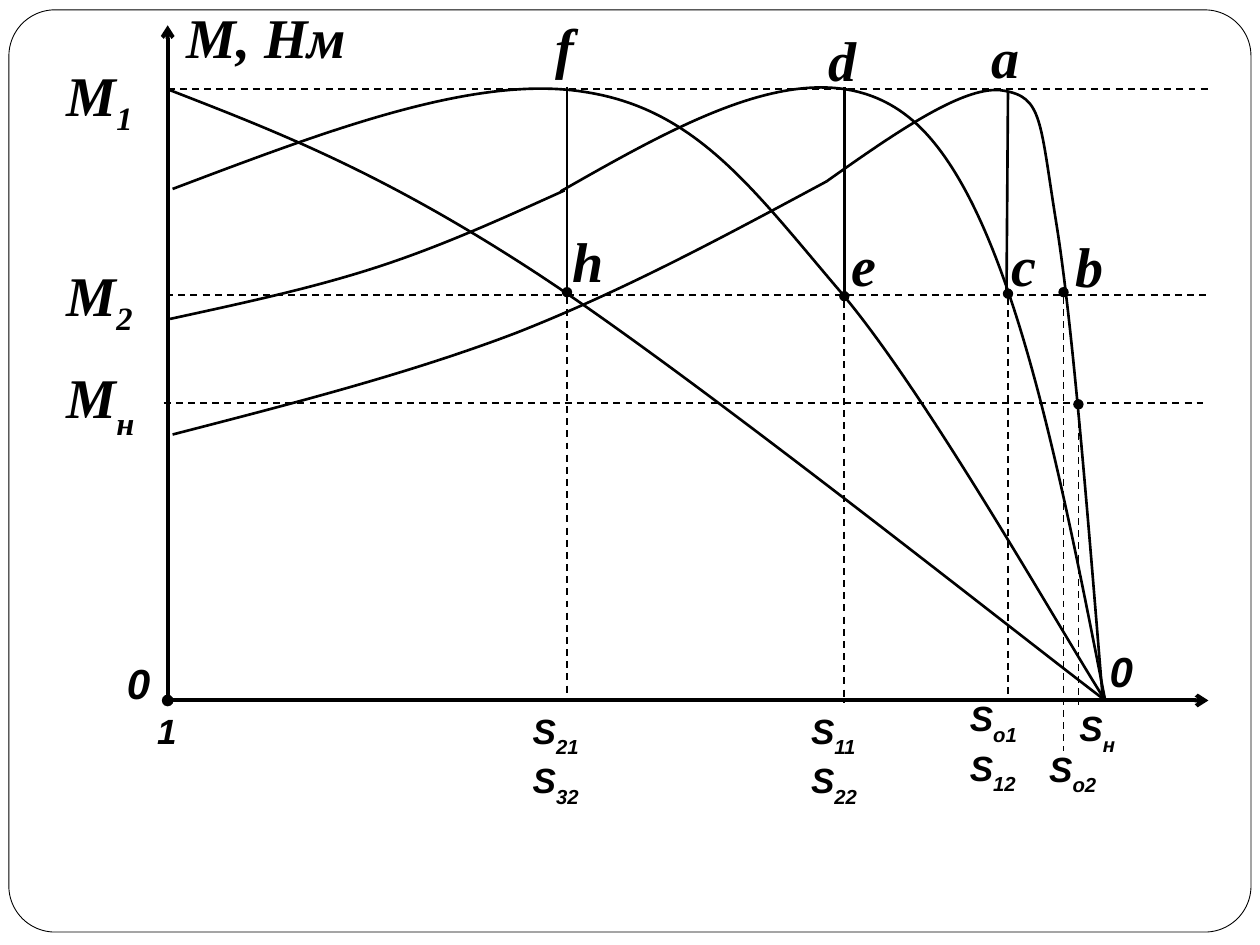
from dataclasses import dataclass

from lxml.etree import SubElement
from pptx import Presentation
from pptx.dml.color import RGBColor
from pptx.enum.dml import MSO_LINE
from pptx.enum.shapes import MSO_CONNECTOR, MSO_SHAPE
from pptx.enum.text import MSO_ANCHOR, PP_ALIGN
from pptx.oxml.ns import qn
from pptx.slide import Slide
from pptx.util import Cm, Pt

Point = tuple[float, float]


@dataclass(frozen=True)
class Theme:
    ink: RGBColor = RGBColor(0, 0, 0)
    paper: RGBColor = RGBColor(255, 255, 255)
    serif: str = "Times New Roman"
    sans: str = "Arial"
    point_size: int = 32
    zero_size: int = 24
    slip_size: int = 20
    frame_weight: float = 0.5
    guide_weight: float = 1
    curve_weight: float = 1.5
    axis_weight: float = 2.25


THEME = Theme()


@dataclass(frozen=True)
class Rule:
    """A straight line; lengths in cm."""
    start: Point
    end: Point
    weight: float = THEME.guide_weight
    dashed: bool = True
    head: str = ""
    tail: str = ""


@dataclass(frozen=True)
class Label:
    """Text lines, each a base with an optional subscript after "_"."""
    lines: tuple[str, ...]
    left: float
    top: float
    width: float
    height: float = 1.55
    font: str = THEME.serif
    size: int = THEME.point_size
    drop: int = -30


# Positions on the axes, in cm
AXIS_X, AXIS_Y = 3.38, 14.12
AXIS_END = 24.36
M1, M2, M_NOMINAL = 1.8, 5.94, 8.13
F_X, D_X, A_X, B_X, NOMINAL_X = 11.43, 17.02, 20.32, 21.44, 21.74
SYNCHRONOUS = (22.28, AXIS_Y)

RULES = [
    # Axes
    Rule((AXIS_X, 14.17), (AXIS_X, 0.51), THEME.axis_weight, False, tail="arrow"),
    Rule((AXIS_X, AXIS_Y), (AXIS_END, AXIS_Y), THEME.axis_weight, False, "oval", "arrow"),
    # Torque levels
    Rule((AXIS_X, M1), (AXIS_END, M1)),
    Rule((3.35, M2), (24.33, M2)),
    Rule((3.3, M_NOMINAL), (24.26, M_NOMINAL)),
    # Switching between speed steps
    Rule((F_X, 1.75), (F_X, 5.84), THEME.curve_weight, False),
    Rule((D_X, 1.75), (D_X, 5.99), THEME.curve_weight, False),
    Rule((A_X, 1.83), (20.29, 5.92), THEME.curve_weight, False),
    # Drops to the slip axis
    *(Rule((x, top), (x, bottom), head="oval") for x, top, bottom in (
        (F_X, 5.89, 14.05), (D_X, 5.97, 14.15), (A_X, 5.92, 14.07),
        (B_X, 5.89, 15.14), (NOMINAL_X, 8.15, 14.22))),
]

# Each curve: a start, then three Bézier points per segment
CURVES: list[list[Point]] = [
    [(AXIS_X, M1), (5.54, 2.64), (7.67, 3.45), (10.82, 5.51),
     (13.97, 7.57), (20.37, 12.67), SYNCHRONOUS],
    [(3.48, 3.81), (6.5, 2.67), (9.53, 1.5), (11.76, 1.85), (14, 2.18),
     (15.14, 3.76), (16.89, 5.82), (18.64, 7.85), (21.39, 12.73), SYNCHRONOUS],
    [SYNCHRONOUS, (21.31, 9.17), (20.32, 4.22), (18.49, 2.51),
     (16.66, 0.81), (13.97, 2.34), (11.3, 3.86)],
    [(11.38, 3.84), (10.16, 4.39), (8.94, 4.95), (7.62, 5.38),
     (6.27, 5.82), (4.85, 6.12), (3.43, 6.43)],
    [(22.23, 14.07), (21.92, 10.29), (21.62, 6.5), (21.29, 4.47), (20.96, 2.41),
     (21.01, 1.96), (20.24, 1.83), (19.48, 1.68), (18.06, 2.67), (16.66, 3.66)],
    [(16.66, 3.66), (14.63, 4.75), (12.62, 5.84), (10.41, 6.71),
     (8.23, 7.54), (5.84, 8.15), (3.48, 8.76)],
]

SLIP = {"font": THEME.sans, "size": THEME.slip_size}
ZERO = {"font": THEME.sans, "size": THEME.zero_size}

LABELS = [
    # Torque axis
    Label(("М, Нм",), 3.51, -0.08, 4.39, 1.78),
    Label(("М_1",), 1.09, 1.09, 1.91, 1.63, drop=-25),
    Label(("М_2",), 1.09, 5.13, 1.91, 1.63, drop=-25),
    Label(("М_н",), 1.09, 7.19, 2.29, 1.88),
    # Working points
    Label(("f",), 10.95, 0.13, 1.14),
    Label(("d",), 16.46, 0.38, 1.45),
    Label(("a",), 19.74, 0.33, 1.4),
    Label(("h",), 11.3, 4.45, 1.98),
    Label(("e",), 16.92, 4.52, 1.98),
    Label(("c",), 20.14, 4.52, 1.98),
    Label(("b",), 21.44, 4.55, 1.98),
    # Slip axis
    Label(("0",), 2.31, 13.13, 1.12, 1.19, **ZERO),
    Label(("0",), 22.12, 12.88, 1.98, **ZERO),
    Label(("1",), 2.92, 14.17, 0.99, 1.04, **SLIP),
    Label(("S_21", "S_32"), 10.49, 14.17, 2.01, 2.44, **SLIP),
    Label(("S_11", "S_22"), 16.1, 14.17, 1.98, 2.44, **SLIP),
    Label(("S_о1", "S_12"), 19.3, 13.92, 1.98, 2.49, **SLIP),
    Label(("S_н",), 21.51, 14.12, 1.6, 1.45, **SLIP),
    Label(("S_o2",), 20.9, 14.94, 1.6, 1.45, **SLIP),
]


def ink_line(shape, weight: float) -> None:
    shape.line.color.rgb = THEME.ink
    shape.line.width = Pt(weight)


def draw_frame(slide: Slide) -> None:
    frame = slide.shapes.add_shape(
        MSO_SHAPE.ROUNDED_RECTANGLE, Cm(0.18), Cm(0.2), Cm(25.04), Cm(18.59))
    frame.adjustments[0] = 0.05
    frame.shadow.inherit = False
    frame.fill.solid()
    frame.fill.fore_color.rgb = THEME.paper
    ink_line(frame, THEME.frame_weight)


def draw_rule(slide: Slide, rule: Rule) -> None:
    connector = slide.shapes.add_connector(
        MSO_CONNECTOR.STRAIGHT, *(Cm(v) for v in rule.start + rule.end))
    ink_line(connector, rule.weight)
    if rule.dashed:
        connector.line.dash_style = MSO_LINE.DASH
    properties = connector.element.spPr
    for tag, kind in (("a:headEnd", rule.head), ("a:tailEnd", rule.tail)):
        if kind:
            SubElement(properties.find(qn("a:ln")), qn(tag), type=kind)
    SubElement(properties, qn("a:effectLst"))


def draw_curve(slide: Slide, points: list[Point]) -> None:
    start, *rest = [(Cm(x), Cm(y)) for x, y in points]
    builder = slide.shapes.build_freeform(*start)
    builder.add_line_segments(rest, close=False)
    curve = builder.convert_to_shape()
    curve.shadow.inherit = False
    curve.fill.background()
    ink_line(curve, THEME.curve_weight)
    # Turn every three straight steps into one cubic segment
    outline = next(curve.element.iter(qn("a:path")))
    steps = outline.findall(qn("a:lnTo"))
    for first in range(0, len(steps), 3):
        cubic = SubElement(outline, qn("a:cubicBezTo"))
        for step in steps[first:first + 3]:
            cubic.append(step[0])
            outline.remove(step)


def draw_label(slide: Slide, label: Label) -> None:
    box = slide.shapes.add_textbox(
        Cm(label.left), Cm(label.top), Cm(label.width), Cm(label.height))
    frame = box.text_frame
    for name, value in {"word_wrap": True, "vertical_anchor": MSO_ANCHOR.TOP}.items():
        setattr(frame, name, value)
    font_format = {"name": label.font, "size": Pt(label.size), "bold": True, "italic": True}
    for index, line in enumerate(label.lines):
        paragraph = frame.add_paragraph() if index else frame.paragraphs[0]
        paragraph.alignment = PP_ALIGN.LEFT
        for level, text in enumerate(line.split("_")):
            run = paragraph.add_run()
            run.text = text
            for name, value in font_format.items():
                setattr(run.font, name, value)
            run.font.color.rgb = THEME.ink
            if level:
                run.font._element.set("baseline", str(label.drop * 1000))


def main() -> None:
    deck = Presentation()
    deck.slide_width, deck.slide_height = Cm(25.4), Cm(19.05)
    slide = deck.slides.add_slide(deck.slide_layouts[6])
    draw_frame(slide)
    for rule in RULES:
        draw_rule(slide, rule)
    for points in CURVES:
        draw_curve(slide, points)
    for label in LABELS:
        draw_label(slide, label)
    deck.save("out.pptx")


if __name__ == "__main__":
    main()
